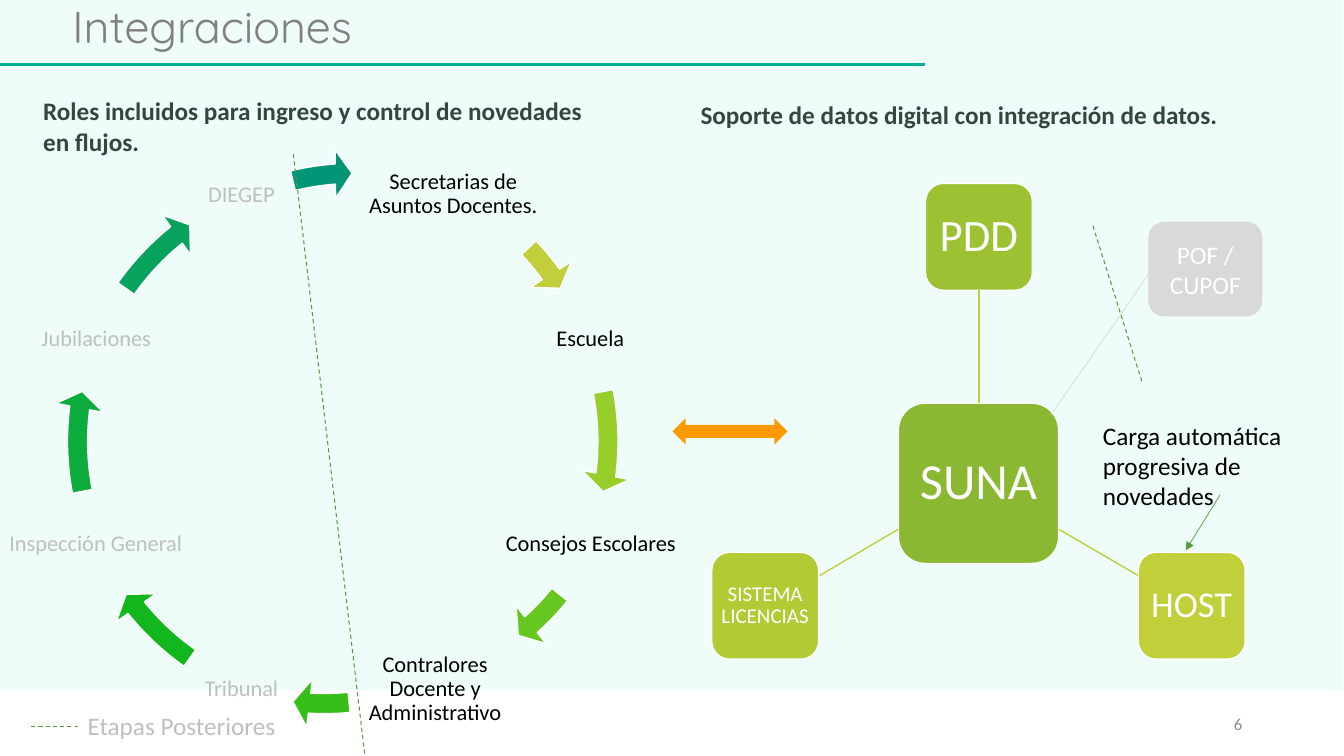
from dataclasses import dataclass

import pptx
import pptx.dml.color
import pptx.enum.dml
import pptx.enum.shapes
import pptx.enum.text
import pptx.oxml
import pptx.oxml.ns
import pptx.util

Inches = pptx.util.Inches
Pt = pptx.util.Pt
SHAPE = pptx.enum.shapes.MSO_SHAPE
ALIGN = pptx.enum.text.PP_ALIGN
ANCHOR = pptx.enum.text.MSO_ANCHOR


@dataclass(frozen=True)
class Theme:
    title_font: str = "Quicksand"
    body_font: str = "Calibri"
    title: int = 32
    body: int = 18
    label: int = 16
    number: int = 12
    backdrop: str = "C5F5F0"
    rule: str = "00B092"
    title_grey: str = "808080"
    number_grey: str = "8C8C8C"
    heading: str = "34473D"
    text: str = "000000"
    later: str = "BFBFBF"
    later_fill: str = "D9D9D9"
    white: str = "FFFFFF"
    link: str = "C0CF3A"
    stage: str = "549E39"
    exchange: str = "FF9900"


T = Theme()
RING = 5.74
BAND = 0.2
HEAD = 0.24
SWEEP = 2.17
LABEL_HEIGHT = 1.03
NODE_INSET = 0.04

ROLES = [
    ("Secretarias de Asuntos Docentes.", 3.5, 1.41, 1.99, T.text,
     0.46, 1.39, 194.54, 190.04, "C0CF3A"),
    ("Escuela", 5.34, 2.85, 1.03, T.text,
     0.53, 1.51, 4.36, 209.48, "97CF2A"),
    ("Consejos Escolares", 4.97, 4.88, 1.78, T.text,
     0.64, 1.37, 28.85, 23.45, "67C721"),
    ("Contralores Docente y Administrativo", 3.47, 6.32, 1.69, T.text,
     0.35, 1.48, 55.95, 50.82, "37BF19"),
    ("Tribunal", 1.88, 6.32, 1.03, T.later,
     0.53, 1.51, 84.7, 75.13, "12B61D"),
    ("Inspección General", 0.07, 4.88, 1.76, T.later,
     0.53, 1.51, 112.36, 101.48, "0CAC3D"),
    ("Jubilaciones", 0.12, 2.85, 1.67, T.later,
     0.53, 1.51, 138.7, 129.13, "07A25B"),
    ("DIEGEP", 1.88, 1.42, 1.03, T.later,
     0.65, 1.48, 159.47, 153.89, "029676"),
]

NODES = [
    ("SUNA", 8.91, 4, 1.59, "8AB833", 36),
    ("PDD", 9.18, 1.82, 1.06, "9CC233", 32),
    ("SISTEMA LICENCIAS", 7.06, 5.48, 1.06, "B0CB34", 15),
    ("HOST", 11.29, 5.48, 1.06, "C0CF3A", 26),
]

LINKS = [
    ((9.71, 4), (9.71, 2.88)),
    ((8.91, 5.25), (8.13, 5.71)),
    ((10.5, 5.25), (11.29, 5.71)),
]

STAGE_LINES = [
    ((2.91, 1.53), (3.62, 7.5)),
    ((10.84, 2.24), (11.33, 3.8)),
    ((0.31, 7.21), (0.77, 7.21)),
]


def rgb(color):
    return pptx.dml.color.RGBColor.from_string(color)


def write(sp, text, size, color, font=T.body_font, bold=False,
          align=ALIGN.LEFT, anchor=ANCHOR.TOP, spacing=1.0, inset=None):
    tf = sp.text_frame
    tf.word_wrap = True
    tf.vertical_anchor = anchor
    if inset is not None:
        tf.margin_left = tf.margin_right = Inches(inset)
        tf.margin_top = tf.margin_bottom = Inches(inset)
    p = tf.paragraphs[0]
    p.alignment = align
    p.line_spacing = spacing
    r = p.add_run()
    r.text = text
    r.font.name = font
    r.font.size = Pt(size)
    r.font.bold = bold
    r.font.color.rgb = rgb(color)


def add_text(s, box, text, size, color, **style):
    sp = s.shapes.add_textbox(*map(Inches, box))
    write(sp, text, size, color, **style)


def add_shape(s, kind, box, fill, outline=None):
    sp = s.shapes.add_shape(kind, *map(Inches, box))
    sp.shadow.inherit = False
    sp.fill.solid()
    sp.fill.fore_color.rgb = rgb(fill)
    if outline:
        sp.line.color.rgb = rgb(outline)
        sp.line.width = Pt(1)
    else:
        sp.line.fill.background()
    return sp


def add_line(s, start, end, color, width, dashed=False, arrow=False):
    line = s.shapes.add_connector(
        pptx.enum.shapes.MSO_CONNECTOR.STRAIGHT, *map(Inches, start + end))
    line.line.color.rgb = rgb(color)
    line.line.width = Pt(width)
    if dashed:
        line.line.dash_style = pptx.enum.dml.MSO_LINE.DASH
    if arrow:
        ln = line.line._get_or_add_ln()
        tail = pptx.oxml.ns.qn("a:tailEnd")
        ln.append(ln.makeelement(tail, {"type": "triangle"}))
    props = line._element.spPr
    props.append(props.makeelement(pptx.oxml.ns.qn("a:effectLst"), {}))


def add_backdrop(s):
    sp = add_shape(s, SHAPE.RECTANGLE, (-0.01, -0.65, 13.33, 7.5), T.backdrop)
    color = sp._element.spPr.find(".//" + pptx.oxml.ns.qn("a:srgbClr"))
    alpha = pptx.oxml.ns.qn("a:alpha")
    color.append(color.makeelement(alpha, {"val": "28000"}))


def add_role(s, text, left, top, width, color,
             ring_left, ring_top, end, start, fill):
    add_text(s, (left, top, width, LABEL_HEIGHT), text, T.label, color,
             align=ALIGN.CENTER, anchor=ANCHOR.MIDDLE, spacing=0.9, inset=0.02)
    sp = add_shape(s, SHAPE.CIRCULAR_ARROW, (ring_left, ring_top, RING, RING),
                   fill, T.white)
    for i, value in enumerate((BAND / RING, SWEEP, end, start, HEAD / RING)):
        sp.adjustments[i] = value


def add_node(s, text, left, top, side, fill, size):
    sp = add_shape(s, SHAPE.ROUNDED_RECTANGLE, (left, top, side, side),
                   fill, T.white)
    write(sp, text, size, T.white, align=ALIGN.CENTER, anchor=ANCHOR.MIDDLE,
          spacing=0.9, inset=NODE_INSET)


def main():
    prs = pptx.Presentation()
    prs.slide_width = Inches(13.33)
    prs.slide_height = Inches(7.5)
    s = prs.slides.add_slide(prs.slide_layouts[6])

    add_backdrop(s)
    add_line(s, (0, 0.64), (9.17, 0.64), T.rule, 2.25)
    add_text(s, (0.62, 0, 11.5, 1.45), "Integraciones", T.title, T.title_grey,
             font=T.title_font, spacing=0.9)
    add_text(s, (9.42, 6.98, 3, 0.4), "6", T.number, T.number_grey,
             align=ALIGN.RIGHT, anchor=ANCHOR.MIDDLE)

    for role in ROLES:
        add_role(s, *role)
    for node in NODES:
        add_node(s, *node)
    for start, end in LINKS:
        add_line(s, start, end, T.link, 1)

    add_text(s, (0.33, 0.9, 5.64, 0.71),
             "Roles incluidos para ingreso y control de novedades en flujos.",
             T.body, T.heading, bold=True)
    add_text(s, (6.85, 0.94, 6.43, 0.4),
             "Soporte de datos digital con integración de datos.",
             T.body, T.heading, bold=True)
    add_shape(s, SHAPE.LEFT_RIGHT_ARROW, (6.67, 4.15, 1.14, 0.26), T.exchange)
    add_text(s, (10.84, 4.12, 2.45, 1.01),
             "Carga automática progresiva de novedades", T.body, T.text)
    add_line(s, (12.1, 4.91), (11.76, 5.46), T.stage, 0.5, arrow=True)

    later = add_shape(s, SHAPE.ROUNDED_RECTANGLE, (11.39, 2.2, 1.13, 0.94),
                      T.later_fill)
    write(later, "POF / CUPOF", T.body, T.white, align=ALIGN.CENTER,
          anchor=ANCHOR.MIDDLE)
    add_line(s, (10.42, 4.12), (11.49, 2.58), T.later_fill, 0.5)
    for start, end in STAGE_LINES:
        add_line(s, start, end, T.stage, 0.75, dashed=True)
    add_text(s, (0.77, 7, 3.57, 0.4), "Etapas Posteriores", T.body, T.later)

    prs.save("out.pptx")


if __name__ == "__main__":
    main()
